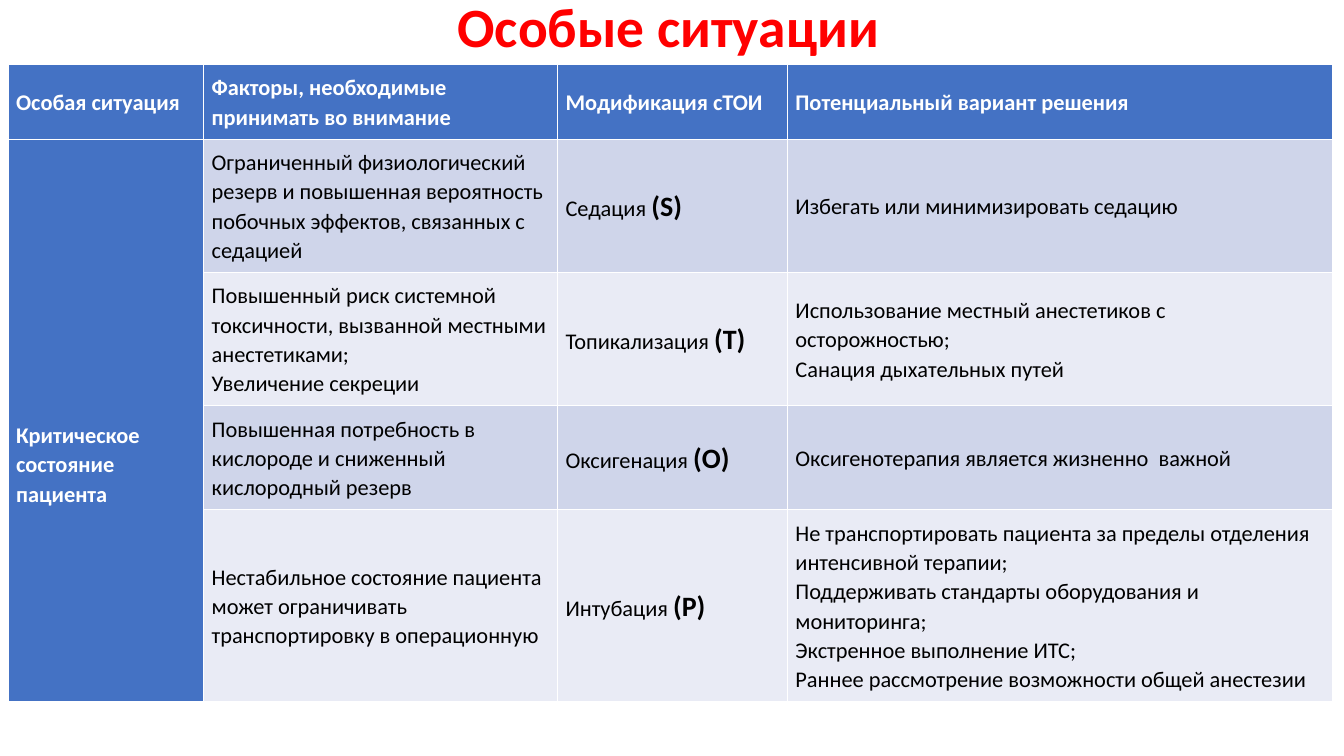
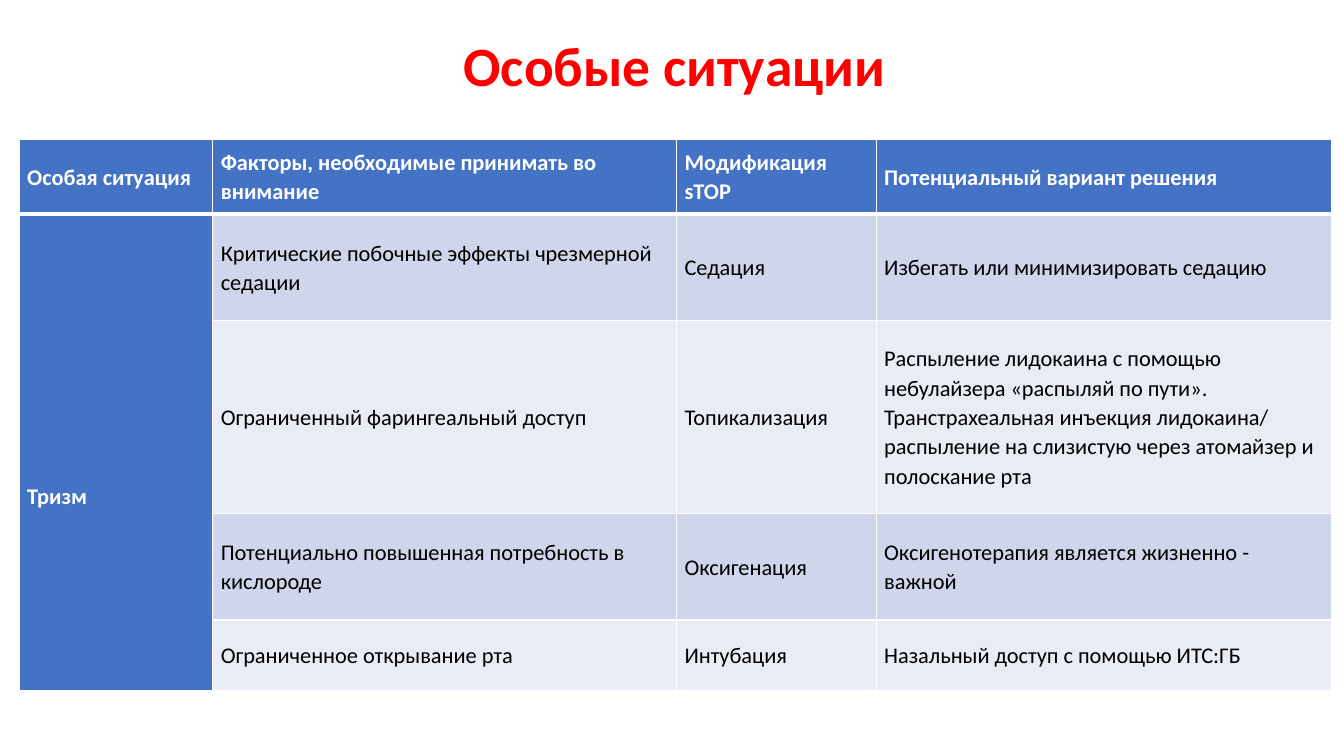
from pptx import Presentation
from pptx.dml.color import RGBColor
from pptx.enum.text import MSO_ANCHOR, MSO_AUTO_SIZE, PP_ALIGN
from pptx.oxml.ns import qn
from pptx.util import Inches, Pt
from lxml import etree

MIDDLE, TOP = MSO_ANCHOR.MIDDLE, MSO_ANCHOR.TOP
CENTER = PP_ALIGN.CENTER
NO_FIT = MSO_AUTO_SIZE.NONE
TITLE_ONLY = 5

COLORS = {
    "title": "FF0000",
    "head": "4472C4",
    "odd_row": "CFD5EA",
    "even_row": "E9EBF5",
    "border": "FFFFFF",
    "head_text": "FFFFFF",
    "text": "000000",
}
FONT = "Calibri"
TITLE = "Особые ситуации"
TITLE_SIZE, TEXT_SIZE, LETTER_SIZE = 39.6, 16, 20
CELL_MARGIN = 0.08
SITUATION_DROP = 0.87  # lowers the name of the situation in its merged cell

CRITICAL_STATE = {
    "title_box": (0.88, 0, 11.5, 0.64),
    "table_at": (0.08, 0.64),
    "columns": (1.94, 3.51, 2.28, 5.41),
    "rows": (0.73, 1.32, 1.32, 1.03, 1.89),
    "head_rule": 1,
    "modification": "Модификация сТОИ",
    "situation": "Критическое состояние пациента",
    "cases": [
        ("Ограниченный физиологический резерв и повышенная вероятность "
         "побочных эффектов, связанных с седацией",
         "Седация (S)",
         "Избегать или минимизировать седацию"),
        ("Повышенный риск системной токсичности, вызванной местными анестетиками;\n"
         "Увеличение секреции",
         "Топикализация (T)",
         "Использование местный анестетиков с осторожностью;\n"
         "Санация дыхательных путей"),
        ("Повышенная потребность в кислороде и сниженный кислородный резерв",
         "Оксигенация (O)",
         "Оксигенотерапия является жизненно  важной"),
        ("Нестабильное состояние пациента может ограничивать "
         "транспортировку в операционную",
         "Интубация (P)",
         "Не транспортировать пациента за пределы отделения интенсивной терапии;\n"
         "Поддерживать стандарты оборудования и мониторинга;\n"
         "Экстренное выполнение ИТС;\n"
         "Раннее рассмотрение возможности общей анестезии"),
    ],
}

TRISMUS = {
    "title_box": (0.94, 0.38, 11.5, 1),
    "table_at": (0.19, 1.38),
    "columns": (1.92, 4.6, 1.98, 4.52),
    "rows": (0.73, 1.06, 1.91, 1.06, 0.7),
    "head_rule": 3,
    "modification": "Модификация sTOP",
    "situation": "Тризм",
    "cases": [
        ("Критические побочные эффекты чрезмерной седации",
         "Седация",
         "Избегать или минимизировать седацию"),
        ("Ограниченный фарингеальный доступ",
         "Топикализация",
         "Распыление лидокаина с помощью небулайзера «распыляй по пути».\n"
         "Транстрахеальная инъекция лидокаина/\n"
         "распыление на слизистую через атомайзер и полоскание рта"),
        ("Потенциально повышенная потребность в кислороде",
         "Оксигенация",
         "Оксигенотерапия является жизненно - важной"),
        ("Ограниченное открывание рта",
         "Интубация",
         "Назальный доступ с помощью ИТС:ГБ"),
    ],
}


def rgb(name):
    return RGBColor.from_string(COLORS[name])


def format_run(run, size, color, bold):
    run.font.name = FONT
    run.font.size = Pt(size)
    run.font.bold = bold
    run.font.color.rgb = rgb(color)


def add_title(slide, box):
    title = slide.shapes.title
    title.left, title.top, title.width, title.height = map(Inches, box)
    frame = title.text_frame
    frame.text = TITLE
    frame.auto_size = NO_FIT
    frame.vertical_anchor = TOP
    frame.margin_top = frame.margin_bottom = 0
    paragraph = frame.paragraphs[0]
    paragraph.alignment = CENTER
    paragraph.line_spacing = 0.9
    format_run(paragraph.runs[0], TITLE_SIZE, "title", True)


def set_borders(cell, top, bottom):
    """Draws the four edges; the widths of top and bottom are in points."""
    properties = cell._tc.get_or_add_tcPr()
    for side, width in (("L", 1), ("R", 1), ("T", top), ("B", bottom)):
        line = etree.SubElement(properties, qn(f"a:ln{side}"), w=str(Pt(width)))
        fill = etree.SubElement(line, qn("a:solidFill"))
        etree.SubElement(fill, qn("a:srgbClr"), val=COLORS["border"])


def fill_cell(cell, text, fill, is_head):
    cell.fill.solid()
    cell.fill.fore_color.rgb = rgb(fill)
    cell.vertical_anchor = MIDDLE
    cell.margin_left = cell.margin_right = Inches(CELL_MARGIN)
    cell.margin_top = cell.margin_bottom = Inches(CELL_MARGIN)
    cell.text_frame.text = text
    color = "head_text" if is_head else "text"
    for paragraph in cell.text_frame.paragraphs:
        paragraph.line_spacing = 1.07
        for run in paragraph.runs:
            words, bracket, letter = run.text.partition("(")
            run.text = words
            format_run(run, TEXT_SIZE, color, is_head)
            if bracket:
                letter_run = paragraph.add_run()
                letter_run.text = bracket + letter
                format_run(letter_run, LETTER_SIZE, color, True)


def add_situation_table(slide, content):
    columns, rows = content["columns"], content["rows"]
    lengths = (*content["table_at"], sum(columns), sum(rows))
    table = slide.shapes.add_table(len(rows), len(columns), *map(Inches, lengths)).table
    for column, width in zip(table.columns, columns):
        column.width = Inches(width)
    for row, height in zip(table.rows, rows):
        row.height = Inches(height)

    headings = ("Особая ситуация", "Факторы, необходимые принимать во внимание",
                content["modification"], "Потенциальный вариант решения")
    names = [content["situation"]] + [""] * (len(rows) - 2)
    lines = [headings] + [(name, *case) for name, case in zip(names, content["cases"])]
    for r, texts in enumerate(lines):
        for c, text in enumerate(texts):
            cell = table.cell(r, c)
            is_head = r == 0 or c == 0
            band = "odd_row" if r % 2 else "even_row"
            set_borders(cell, content["head_rule"] if r == 1 else 1,
                        content["head_rule"] if r == 0 else 1)
            fill_cell(cell, text, "head" if is_head else band, is_head)

    situation = table.cell(1, 0)
    situation.merge(table.cell(len(rows) - 1, 0))
    situation.margin_top = Inches(CELL_MARGIN + SITUATION_DROP)


def add_situation_slide(presentation, content):
    slide = presentation.slides.add_slide(presentation.slide_layouts[TITLE_ONLY])
    add_title(slide, content["title_box"])
    add_situation_table(slide, content)


def main():
    presentation = Presentation()
    presentation.slide_width = Inches(13.33)
    presentation.slide_height = Inches(7.5)
    for content in (CRITICAL_STATE, TRISMUS):
        add_situation_slide(presentation, content)
    presentation.save("out.pptx")


if __name__ == "__main__":
    main()
